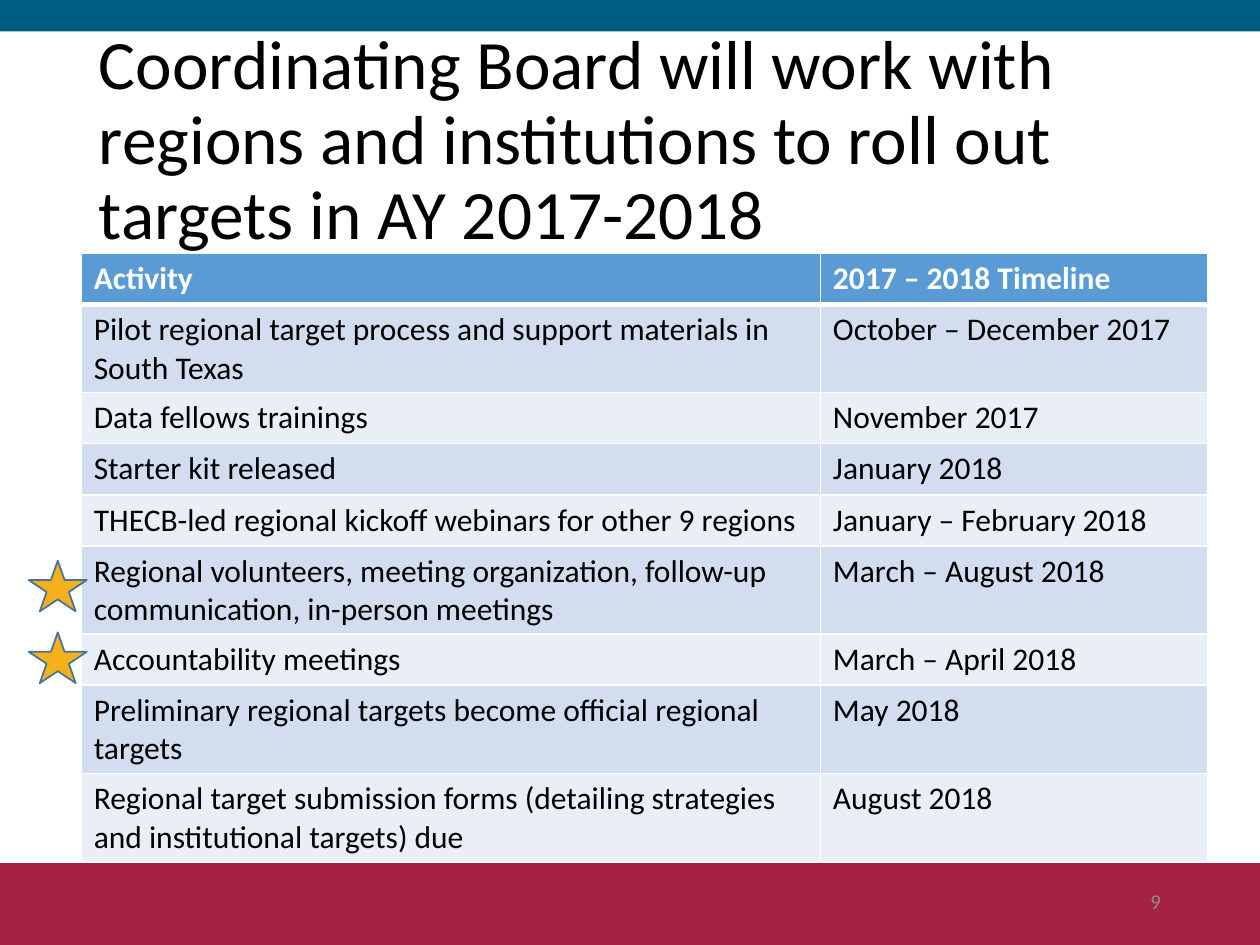
from dataclasses import dataclass

from lxml import etree
from pptx import Presentation
from pptx.dml.color import RGBColor
from pptx.enum import shapes, text
from pptx.oxml import ns
from pptx.util import Pt


@dataclass(frozen=True)
class Theme:
    font: str = "Calibri"
    black: str = "000000"
    white: str = "FFFFFF"
    gray: str = "8C8C8C"
    top_band: str = "005B83"
    bottom_band: str = "A62242"
    header: str = "5B9BD5"
    bands: tuple = ("D2DEEF", "EAEFF7")
    star: str = "F6B11A"
    star_line: str = "43739E"
    title_size: float = 39.6
    table_size: float = 18
    number_size: float = 12


THEME = Theme()

TITLE = ("Coordinating Board will work with regions and institutions "
         "to roll out targets in AY 2017-2018")
ROWS = [
    ("Activity", "2017 – 2018 Timeline"),
    ("Pilot regional target process and support materials in South Texas",
     "October – December 2017"),
    ("Data fellows trainings", "November 2017"),
    ("Starter kit released", "January 2018"),
    ("THECB-led regional kickoff webinars for other 9 regions",
     "January – February 2018"),
    ("Regional volunteers, meeting organization, follow-up communication, "
     "in-person meetings", "March – August 2018"),
    ("Accountability meetings", "March – April 2018"),
    ("Preliminary regional targets become official regional targets", "May 2018"),
    ("Regional target submission forms (detailing strategies and institutional "
     "targets) due", "August 2018"),
]
COLUMN_WIDTHS = (422.4, 221.2)
ROW_HEIGHT = 29.2


def rgb(value):
    return RGBColor.from_string(value)


def add_run(p, words, size, color, bold=False):
    r = p.add_run()
    r.text = words
    r.font.name = THEME.font
    r.font.size = Pt(size)
    r.font.bold = bold
    r.font.color.rgb = rgb(color)


def add_text(s, box, words, size, color, align=text.PP_ALIGN.LEFT, spacing=1.0):
    tf = s.shapes.add_textbox(*map(Pt, box)).text_frame
    tf.word_wrap = True
    tf.vertical_anchor = text.MSO_ANCHOR.MIDDLE
    p = tf.paragraphs[0]
    p.alignment = align
    p.line_spacing = spacing
    add_run(p, words, size, color)


def add_filled(s, kind, box, fill, line=None):
    sp = s.shapes.add_shape(kind, *map(Pt, box))
    sp.shadow.inherit = False
    sp.fill.solid()
    sp.fill.fore_color.rgb = rgb(fill)
    if line:
        sp.line.color.rgb = rgb(line)
        sp.line.width = Pt(1)
    else:
        sp.line.fill.background()


def set_borders(cell, top, bottom):
    tc_pr = cell._tc.get_or_add_tcPr()
    for side, width in (("L", 1), ("R", 1), ("T", top), ("B", bottom)):
        ln = etree.SubElement(tc_pr, ns.qn(f"a:ln{side}"), w=str(Pt(width)))
        fill = etree.SubElement(ln, ns.qn("a:solidFill"))
        etree.SubElement(fill, ns.qn("a:srgbClr"), val=THEME.white)


def add_timeline(s, left, top):
    table = s.shapes.add_table(
        len(ROWS), len(COLUMN_WIDTHS), Pt(left), Pt(top),
        Pt(sum(COLUMN_WIDTHS)), Pt(ROW_HEIGHT * len(ROWS))).table
    for column, width in zip(table.columns, COLUMN_WIDTHS):
        column.width = Pt(width)
    for i, row in enumerate(ROWS):
        table.rows[i].height = Pt(ROW_HEIGHT)
        is_header = i == 0
        fill = THEME.header if is_header else THEME.bands[(i - 1) % 2]
        color = THEME.white if is_header else THEME.black
        for j, words in enumerate(row):
            cell = table.cell(i, j)
            set_borders(cell, 3 if i == 1 else 1, 3 if is_header else 1)
            cell.fill.solid()
            cell.fill.fore_color.rgb = rgb(fill)
            add_run(cell.text_frame.paragraphs[0], words,
                    THEME.table_size, color, is_header)


def main():
    prs = Presentation()
    prs.slide_width, prs.slide_height = Pt(720), Pt(540)
    s = prs.slides.add_slide(prs.slide_layouts[6])
    kinds = shapes.MSO_SHAPE
    add_filled(s, kinds.RECTANGLE, (0, 493.2, 720, 48.2), THEME.bottom_band)
    add_filled(s, kinds.RECTANGLE, (0, 0, 720, 18), THEME.top_band)
    add_text(s, (49.5, 28.8, 621, 104.4), TITLE, THEME.title_size,
             THEME.black, spacing=0.9)
    add_timeline(s, 46.4, 144.7)
    add_text(s, (508.5, 500.5, 162, 28.8), "9", THEME.number_size,
             THEME.gray, align=text.PP_ALIGN.RIGHT)
    for top in (320.4, 361.4):
        add_filled(s, kinds.STAR_5_POINT, (16.4, top, 33.2, 29),
                   THEME.star, THEME.star_line)
    prs.save("out.pptx")


if __name__ == "__main__":
    main()
